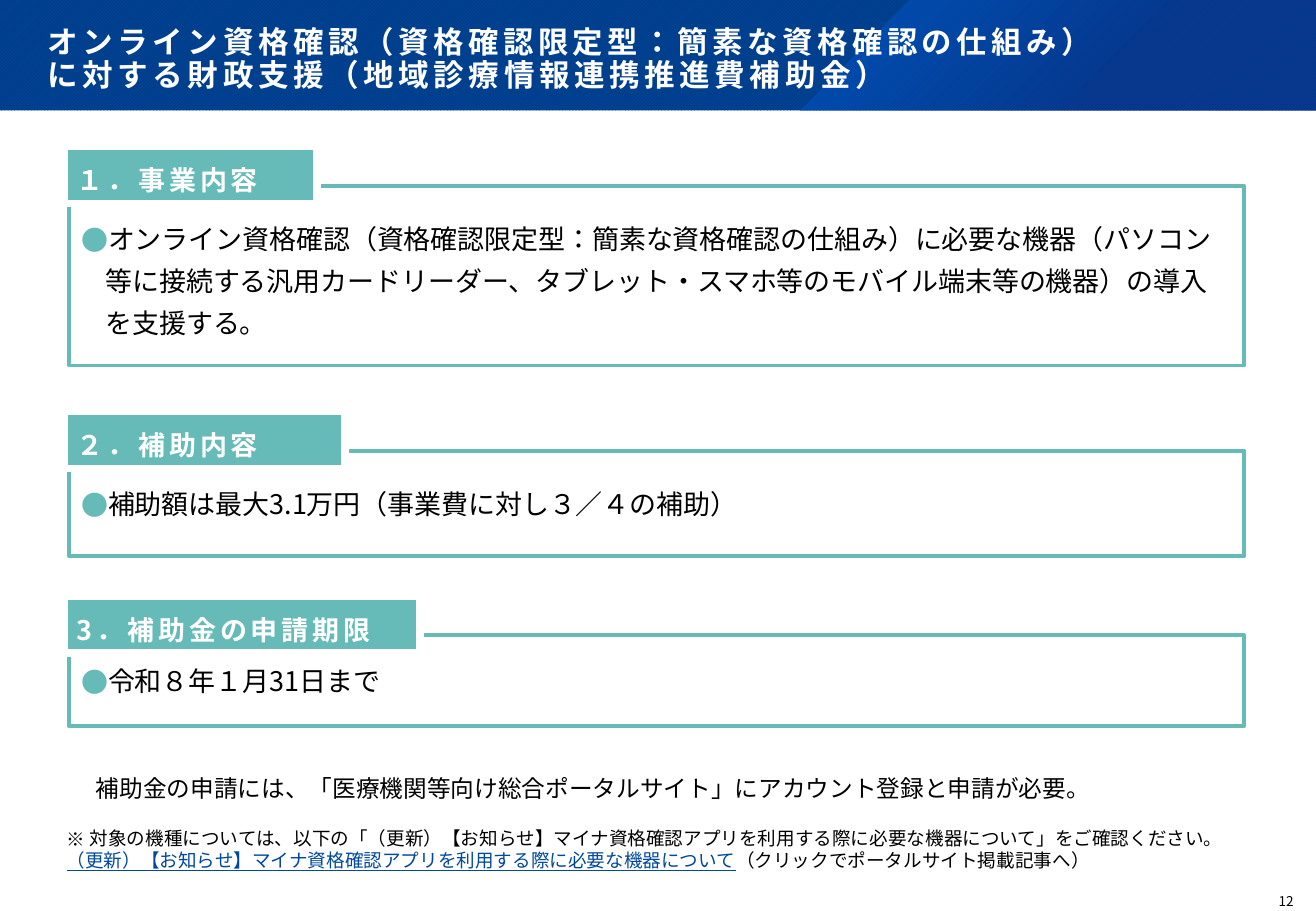
from pptx import Presentation
from pptx.dml.color import RGBColor
from pptx.enum.dml import MSO_PATTERN
from pptx.enum.lang import MSO_LANGUAGE_ID as Lang
from pptx.enum.shapes import MSO_SHAPE
from pptx.enum.text import MSO_ANCHOR as Anchor, PP_ALIGN as Align
from pptx.oxml import parse_xml
from pptx.oxml.ns import nsdecls, qn
from pptx.util import Inches, Pt
from lxml.etree import SubElement

WIDTH, HEIGHT = Inches(10.83), Inches(7.5)
FACE = "Noto Sans CJK JP"
TEAL = RGBColor(0x66, 0xBA, 0xB7)
NAVY = RGBColor(0x00, 0x35, 0x79)
BLUE = RGBColor(0x00, 0x42, 0x92)
SKY = RGBColor(0x00, 0x64, 0xDF)
DEEP = RGBColor(0x0C, 0x33, 0x8E)
LINK = RGBColor(0x00, 0x48, 0x9E)
WHITE = RGBColor(0xFF, 0xFF, 0xFF)
BLACK = RGBColor(0, 0, 0)

# Lengths below are percent shares of the slide's width and height
BAND = 12.13
LEFT, WIDE = 5.26, 89.29
TAB_LEFT, TAB_HIGH, TAB_RISE = 4.89, 6.27, 4.3

# Heading, tab width, box top, box height, body text, body format
PARTS = [
    ("１．事業内容", 19.21, 20.4, 19.73,
     "オンライン資格確認（資格確認限定型：簡素な資格確認の仕組み）に必要な機器（パソコン"
     "等に接続する汎用カードリーダー、タブレット・スマホ等のモバイル端末等の機器）の導入"
     "を支援する。", {"line_spacing": 1.3}),
    ("２．補助内容", 21.33, 49.47, 11.6,
     "補助額は最大3.1万円（事業費に対し３／４の補助）", {}),
    ("3．補助金の申請期限", 27.05, 69.73, 10,
     "令和８年１月31日まで", {}),
]


def across(share):
    return round(WIDTH * share / 100)


def down(share):
    return round(HEIGHT * share / 100)


def area(left, top, wide, high):
    return across(left), down(top), across(wide), down(high)


def apply(item, form):
    for name, value in form.items():
        setattr(item, name, value)


def add_rect(slide, place, fill=None, line=None, weight=0):
    shape = slide.shapes.add_shape(MSO_SHAPE.RECTANGLE, *area(*place))
    shape.shadow.inherit = False
    if fill is None:
        shape.fill.background()
    else:
        shape.fill.solid()
        shape.fill.fore_color.rgb = fill
    if line is None:
        shape.line.fill.background()
    else:
        shape.line.color.rgb = line
        shape.line.width = Pt(weight)
    return shape


def add_box(slide, place):
    return slide.shapes.add_textbox(*area(*place))


def set_frame(shape, anchor=Anchor.MIDDLE, **inset):
    frame = shape.text_frame
    apply(frame, {"word_wrap": True, "vertical_anchor": anchor})
    apply(frame, {f"margin_{side}": Inches(size) for side, size in inset.items()})
    return frame


def add_run(para, text, size, color=BLACK, space=0, **form):
    run = para.add_run()
    run.text = text
    apply(run.font, {"size": Pt(size), "name": FACE,
                     "language_id": Lang.JAPANESE, **form})
    run.font.color.rgb = color
    props = run.font._element
    if space:
        props.set("spc", str(round(space * 100)))
    SubElement(props, qn("a:ea")).set("typeface", FACE)


def add_mark(para, mark, indent, color=BLACK):
    props = para._p.get_or_add_pPr()
    props.set("marL", str(Inches(indent)))
    props.set("indent", str(-Inches(indent)))
    tint = SubElement(props, qn("a:buClr"))
    SubElement(tint, qn("a:srgbClr")).set("val", str(color))
    SubElement(props, qn("a:buFont")).set("typeface", FACE)
    SubElement(props, qn("a:buChar")).set("char", mark)


def add_band(slide):
    band = add_rect(slide, (0, 0, 100, BAND), BLUE)
    band.fill.patterned()
    apply(band.fill, {"pattern": MSO_PATTERN.DARK_UPWARD_DIAGONAL})
    band.fill.fore_color.rgb = NAVY
    band.fill.back_color.rgb = BLUE

    # Slanted glow on the right
    pen = slide.shapes.build_freeform(across(69.16), 0)
    pen.add_line_segments([(across(x), down(y)) for x, y in
                           ((100, 0), (100, BAND), (60.76, BAND))])
    glow = pen.convert_to_shape()
    glow.shadow.inherit = False
    glow.line.fill.background()
    glow.fill.background()
    stops = "".join(
        f'<a:gs pos="{spot}000"><a:srgbClr val="{color}">'
        f'<a:alpha val="{alpha}000"/></a:srgbClr></a:gs>'
        for spot, color, alpha in ((0, SKY, 50), (62, DEEP, 55)))
    fade = parse_xml(
        f'<a:gradFill {nsdecls("a")} rotWithShape="1"><a:gsLst>{stops}</a:gsLst>'
        '<a:path path="circle"><a:fillToRect r="100000" b="100000"/></a:path>'
        '</a:gradFill>')
    props = glow._element.spPr
    props.replace(props.find(qn("a:noFill")), fade)


def add_title(slide):
    box = add_box(slide, (0, 0, 100, BAND))
    frame = set_frame(box, Anchor.BOTTOM, left=0.39, top=0.36, right=0.36, bottom=0.14)
    para = frame.paragraphs[0]
    para.line_spacing = 0.9
    style = {"color": WHITE, "space": 2.7, "bold": True}
    add_run(para, "オンライン資格確認", 18.1, **style)
    add_run(para, "（資格確認限定型：簡素な資格確認の仕組み）", 18, **style)
    para.add_line_break()
    add_run(para, "に対する財政支援（地域診療情報連携推進費補助金）", 18.1, **style)


def add_part(slide, head, span, top, high, body, form):
    # Outlined body
    box = add_rect(slide, (LEFT, top, WIDE, high), line=TEAL, weight=2.25)
    para = set_frame(box, right=0.08).paragraphs[0]
    add_mark(para, "●", 0.2, TEAL)
    apply(para, {"alignment": Align.LEFT, **form})
    add_run(para, body, 16)

    # Heading tab
    tab = add_rect(slide, (TAB_LEFT, top - TAB_RISE, span, TAB_HIGH), TEAL, WHITE, 4.5)
    para = set_frame(tab).paragraphs[0]
    apply(para, {"alignment": Align.LEFT, "line_spacing": 1.3, "space_after": Pt(8)})
    add_run(para, head, 16, WHITE, 2.4, bold=True)


def add_notes(slide):
    frame = set_frame(add_box(slide, (6.37, 84.27, 88.09, 4.53)), Anchor.TOP)
    add_run(frame.paragraphs[0], "補助金の申請には、「医療機関等向け総合ポータルサイト」"
            "にアカウント登録と申請が必要。", 14)

    frame = set_frame(add_box(slide, (4.16, 90.13, 91.32, 6.27)), Anchor.TOP)
    para = frame.paragraphs[0]
    add_mark(para, "※", 0.19)
    add_run(para, "対象の機種については、以下の「（更新）【お知らせ】マイナ資格確認アプリを"
            "利用する際に必要な機器について」をご確認ください。", 11)
    para = frame.add_paragraph()
    add_run(para, "（更新）【お知らせ】マイナ資格確認アプリを利用する際に必要な機器について",
            11, LINK, underline=True)
    add_run(para, "（クリックでポータルサイト掲載記事へ）", 11)


def add_number(slide):
    box = add_box(slide, (95.75, 97.47, 3.97, 2.53))
    para = set_frame(box, left=0, top=0.03, right=0, bottom=0).paragraphs[0]
    para.alignment = Align.CENTER
    add_run(para, "12", 8)


def main():
    deck = Presentation()
    apply(deck, {"slide_width": WIDTH, "slide_height": HEIGHT})
    slide = deck.slides.add_slide(deck.slide_layouts[6])
    add_band(slide)
    add_title(slide)
    for part in PARTS:
        add_part(slide, *part)
    add_notes(slide)
    add_number(slide)
    deck.save("out.pptx")


if __name__ == "__main__":
    main()
